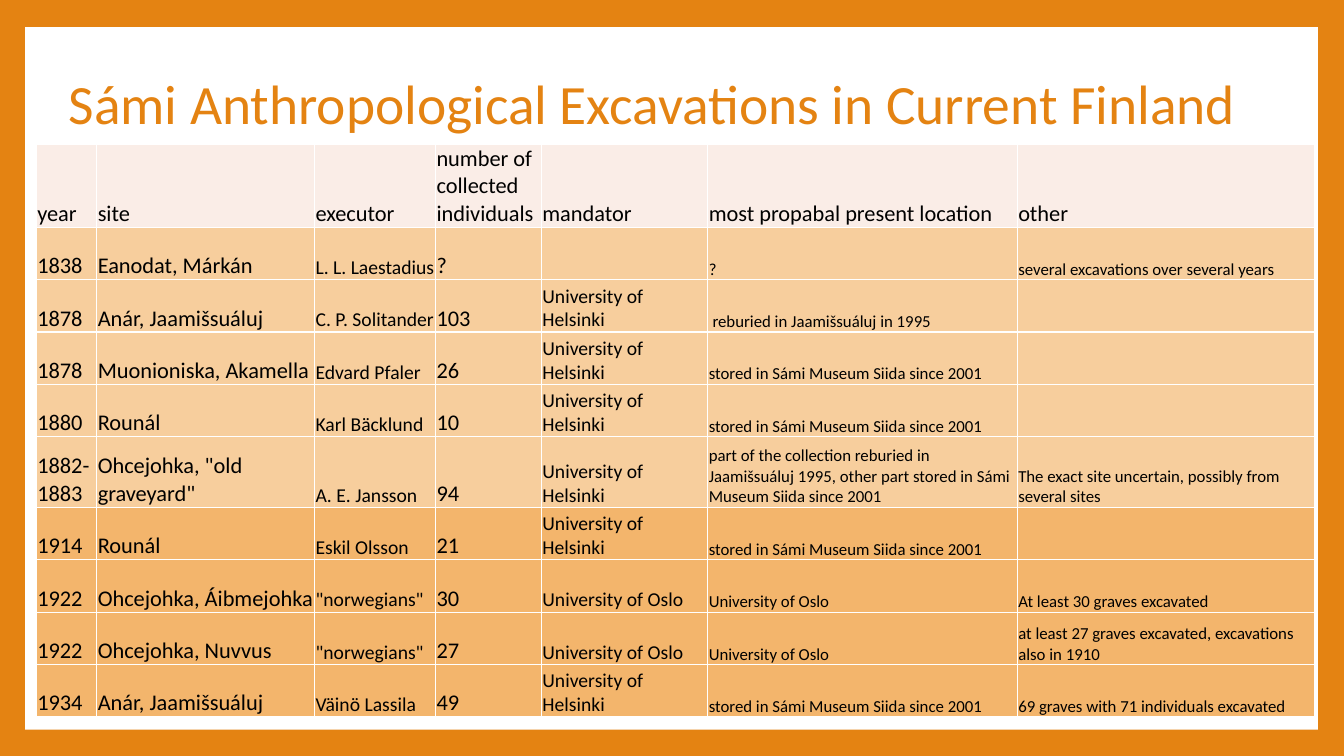
import pptx
import pptx.util
import pptx.dml.color
import pptx.enum.shapes
import pptx.enum.text
import pptx.oxml

Inches, Pt = pptx.util.Inches, pptx.util.Pt
RGB = pptx.dml.color.RGBColor
ANCHOR = pptx.enum.text.MSO_ANCHOR

ORANGE = RGB(0xE4, 0x83, 0x12)
WHITE = RGB(0xFF, 0xFF, 0xFF)
BLACK = RGB(0, 0, 0)
PALE = RGB(0xFA, 0xED, 0xE7)
LIGHT = RGB(0xF7, 0xCE, 0x9D)
DEEP = RGB(0xF3, 0xB5, 0x6C)

FONT = "Calibri"
TITLE = "Sámi Anthropological Excavations in Current Finland"
UH, UO = "University of Helsinki", "University of Oslo"
SIIDA = "stored in Sámi Museum Siida since 2001"
HEAD = ("year", "site", "executor", "number of collected individuals",
        "mandator", "most propabal present location", "other")
EARLY = [
    ("1838", "Eanodat, Márkán", "L. L. Laestadius", "?", "", "?",
     "several excavations over several years"),
    ("1878", "Anár, Jaamišsuáluj", "C. P. Solitander", "103", UH,
     " reburied in Jaamišsuáluj in 1995", ""),
    ("1878", "Muonioniska, Akamella", "Edvard Pfaler", "26", UH, SIIDA, ""),
    ("1880", "Rounál", "Karl Bäcklund", "10", UH, SIIDA, ""),
    ("1882-1883", 'Ohcejohka, "old graveyard"', "A. E. Jansson", "94", UH,
     "part of the collection reburied in Jaamišsuáluj 1995, "
     "other part stored in Sámi Museum Siida since 2001",
     "The exact site uncertain, possibly from several sites"),
]
LATE = [
    ("1914", "Rounál", "Eskil Olsson", "21", UH, SIIDA, ""),
    ("1922", "Ohcejohka, Áibmejohka", '"norwegians"', "30", UO, UO,
     "At least 30 graves excavated"),
    ("1922", "Ohcejohka, Nuvvus", '"norwegians"', "27", UO, UO,
     "at least 27 graves excavated, excavations also in 1910"),
    ("1934", "Anár, Jaamišsuáluj", "Väinö Lassila", "49", UH, SIIDA,
     "69 graves with 71 individuals excavated"),
]
ROWS = [HEAD] + EARLY + LATE
FILLS = [PALE] + [LIGHT] * len(EARLY) + [DEEP] * len(LATE)
WIDTHS = (0.6, 2.16, 1.2, 1.05, 1.65, 3.07, 2.95)
SIZES = (16, 16, 14, 16, 14, 12, 12)
TALL, LOW = 0.7, 0.52
HEIGHTS = [TALL if n in (0, len(EARLY)) else LOW for n in range(len(ROWS))]


def write(frame, text, size, color):
    run = frame.paragraphs[0].add_run()
    run.text = text
    run.font.name, run.font.size = FONT, Pt(size)
    run.font.color.rgb = color


def edge(cell):
    """Give all four sides of a cell a thin white border."""
    props = cell._tc.get_or_add_tcPr()
    for side in "LRTB":
        props.append(pptx.oxml.parse_xml(
            f'<a:ln{side} w="12700" xmlns:a="http://schemas.openxmlformats.org/'
            f'drawingml/2006/main"><a:solidFill><a:srgbClr val="{WHITE}"/>'
            f'</a:solidFill></a:ln{side}>'))


def add_frame(slide):
    slide.background.fill.solid()
    slide.background.fill.fore_color.rgb = ORANGE
    panel = slide.shapes.add_shape(
        pptx.enum.shapes.MSO_SHAPE.RECTANGLE,
        Inches(0.25), Inches(0.27), Inches(12.82), Inches(6.97))
    panel.shadow.inherit = False
    panel.fill.solid()
    panel.fill.fore_color.rgb = WHITE
    panel.line.fill.background()
    slide.shapes.title.element.addprevious(panel.element)


def add_title(slide):
    title = slide.shapes.title
    title.left, title.top = Inches(0.58), Inches(0.67)
    title.width, title.height = Inches(12.21), Inches(0.77)
    frame = title.text_frame
    frame.vertical_anchor = ANCHOR.MIDDLE
    frame.word_wrap = True
    frame.paragraphs[0].alignment = pptx.enum.text.PP_ALIGN.LEFT
    frame.paragraphs[0].line_spacing = 0.9
    write(frame, TITLE, 39.6, ORANGE)


def add_grid(slide):
    grid = slide.shapes.add_table(
        len(ROWS), len(WIDTHS), Inches(0.36), Inches(1.43),
        Inches(sum(WIDTHS)), Inches(sum(HEIGHTS))).table
    grid.first_row = grid.horz_banding = False
    for col, width in zip(grid.columns, WIDTHS):
        col.width = Inches(width)
    for n, (row, texts, fill) in enumerate(zip(grid.rows, ROWS, FILLS)):
        row.height = Inches(HEIGHTS[n])
        for cell, text, size in zip(row.cells, texts, SIZES):
            cell.margin_left = cell.margin_right = Inches(0.01)
            cell.margin_top, cell.margin_bottom = Inches(0.01), 0
            cell.vertical_anchor = ANCHOR.BOTTOM
            edge(cell)
            cell.fill.solid()
            cell.fill.fore_color.rgb = fill
            if text:
                write(cell.text_frame, text, size if n else SIZES[0], BLACK)


def main():
    deck = pptx.Presentation()
    deck.slide_width, deck.slide_height = Inches(13.33), Inches(7.5)
    slide = deck.slides.add_slide(deck.slide_layouts.get_by_name("Title Only"))
    add_frame(slide)
    add_title(slide)
    add_grid(slide)
    deck.save("out.pptx")


if __name__ == "__main__":
    main()
